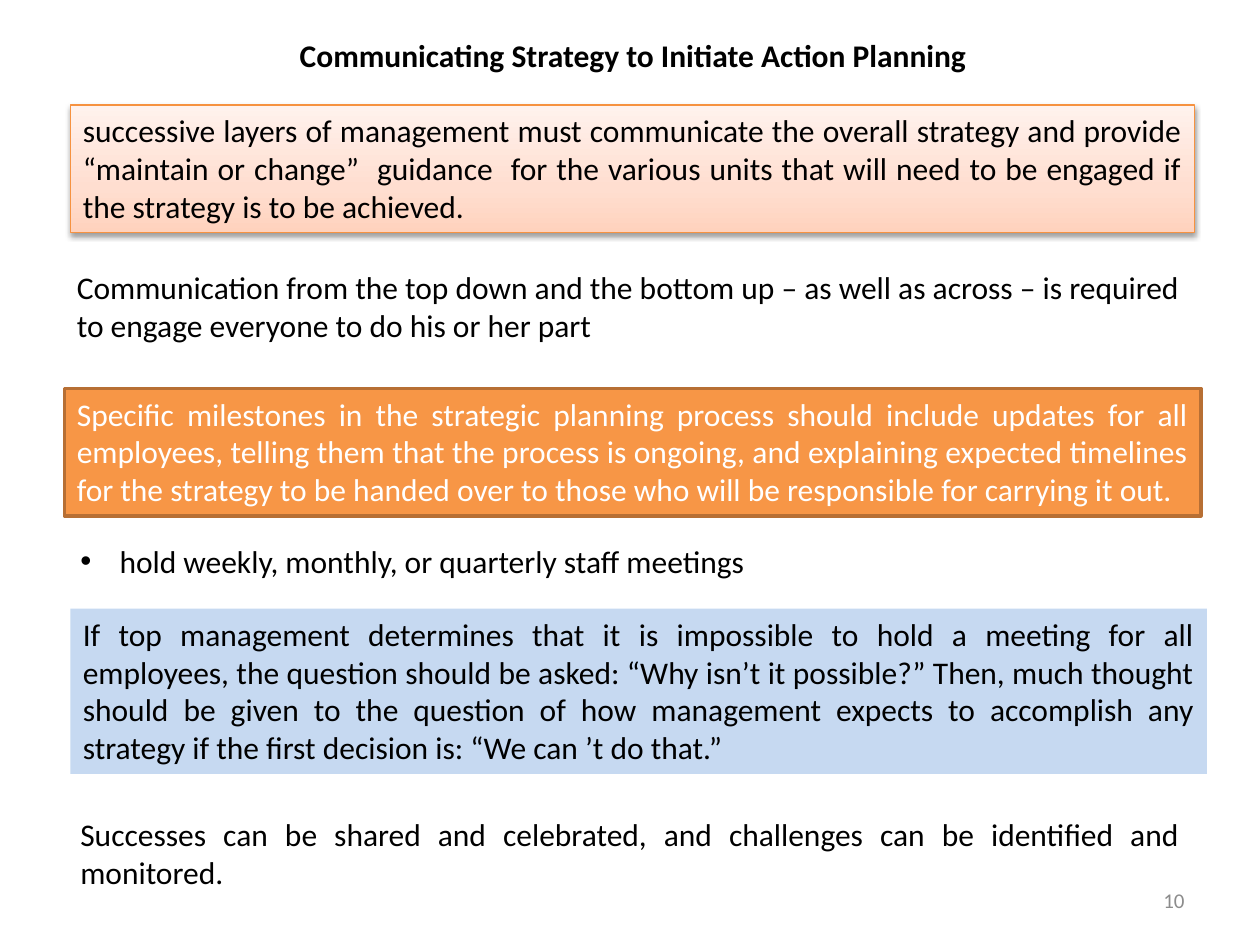
from copy import deepcopy

from lxml import etree
from pptx import Presentation
from pptx.dml.color import RGBColor
from pptx.enum.shapes import MSO_SHAPE
from pptx.enum.text import MSO_ANCHOR, MSO_AUTO_SIZE, PP_ALIGN
from pptx.oxml.ns import qn
from pptx.util import Cm, Pt

RECT = MSO_SHAPE.RECTANGLE
TOP, MIDDLE = MSO_ANCHOR.TOP, MSO_ANCHOR.MIDDLE
GROW, FIXED = MSO_AUTO_SIZE.SHAPE_TO_FIT_TEXT, MSO_AUTO_SIZE.NONE
LEFT, CENTER, RIGHT, JUST = (
    PP_ALIGN.LEFT, PP_ALIGN.CENTER, PP_ALIGN.RIGHT, PP_ALIGN.JUSTIFY)

COLORS = {
    "black": "000000", "white": "FFFFFF", "gray": "8C8C8C",
    "orange": "F79646", "brown": "B76F34", "edge": "F69240",
    "blue": "C6D9F1", "deep": "FFD2BD", "mid": "FFDED0", "pale": "FFF2ED",
}
PEACH = ((0, "deep"), (0.35, "mid"), (1, "pale"))
INDENT = Cm(0.79)


def rgb(name):
    return RGBColor.from_string(COLORS[name])


def write(shape, text, align=LEFT, color="black", size=18, bold=False,
          anchor=TOP, fit=GROW):
    frame = shape.text_frame
    for key, value in {"word_wrap": True, "auto_size": fit,
                       "vertical_anchor": anchor}.items():
        setattr(frame, key, value)
    par = frame.paragraphs[0]
    par.alignment = align
    run = par.add_run()
    run.text = text
    for key, value in {"name": "Calibri", "size": Pt(size),
                       "bold": bold}.items():
        setattr(run.font, key, value)
    run.font.color.rgb = rgb(color)
    return par


def add_text(slide, box, text, **style):
    shape = slide.shapes.add_textbox(*map(Cm, box))
    return write(shape, text, **style)


def add_bullet(slide, box, text):
    props = add_text(slide, box, text)._p.get_or_add_pPr()
    props.set("marL", str(INDENT))
    props.set("indent", str(-INDENT))
    etree.SubElement(props, qn("a:buFont"), typeface="Arial")
    etree.SubElement(props, qn("a:buChar"), char="•")


def add_panel(slide, box, text, fill=None, line=None, width=0, color="black"):
    """Add a justified paragraph in a rectangle, and return the rectangle."""
    shape = slide.shapes.add_shape(RECT, *map(Cm, box))
    shape.shadow.inherit = False
    if fill:
        shape.fill.solid()
        shape.fill.fore_color.rgb = rgb(fill)
    if line:
        shape.line.color.rgb = rgb(line)
        shape.line.width = Pt(width)
    else:
        shape.line.fill.background()
    write(shape, text, align=JUST, color=color)
    return shape


def shade(shape, stops):
    """Fill upwards with a gradient."""
    shape.fill.gradient()
    shape.fill.gradient_angle = 90
    first = shape.fill.gradient_stops[0]._gs
    first.addnext(deepcopy(first))
    for stop, (place, name) in zip(shape.fill.gradient_stops, stops):
        stop.position = place
        stop.color.rgb = rgb(name)


def drop_shadow(shape):
    effects = shape._element.spPr.find(qn("a:effectLst"))
    outer = etree.SubElement(
        effects, qn("a:outerShdw"), blurRad=str(Pt(3.1)), dist=str(Pt(1.6)),
        dir="5400000", rotWithShape="0")
    tint = etree.SubElement(outer, qn("a:srgbClr"), val=COLORS["black"])
    etree.SubElement(tint, qn("a:alpha"), val="38000")


def main():
    deck = Presentation()
    deck.slide_width, deck.slide_height = Cm(25.4), Cm(19.05)
    slide = deck.slides.add_slide(deck.slide_layouts[6])

    add_text(slide, (18.2, 17.65, 5.93, 1.01), "10", align=RIGHT,
             color="gray", size=12, anchor=MIDDLE, fit=FIXED)
    add_text(slide, (4.19, 0.61, 17.15, 1.03),
             "Communicating Strategy to Initiate Action Planning",
             align=CENTER, bold=True)
    layers = add_panel(
        slide, (1.42, 2.12, 22.66, 2.57),
        "successive layers of management must communicate the overall "
        "strategy and provide “maintain or change”  guidance  for the various "
        "units that will need to be engaged if the strategy is to be achieved.",
        line="edge", width=0.75)
    shade(layers, PEACH)
    drop_shadow(layers)
    add_text(
        slide, (1.3, 5.28, 22.91, 1.8),
        "Communication from the top down and the bottom up – as well as "
        "across – is required to engage everyone to do his or her part")
    add_panel(
        slide, (1.3, 7.83, 22.91, 2.57),
        "Speciﬁc milestones in the strategic planning process should include "
        "updates for all employees, telling them that the process is ongoing, "
        "and explaining expected timelines for the strategy to be handed over "
        "to those who will be responsible for carrying it out. ",
        fill="orange", line="brown", width=2, color="white")
    add_text(
        slide, (1.37, 16.31, 22.66, 1.8),
        "Successes can be shared and celebrated, and challenges can be "
        "identiﬁed and monitored. ", align=JUST)
    add_bullet(slide, (1.37, 10.8, 22.83, 1.03),
               "hold weekly, monthly, or quarterly staff meetings")
    add_panel(
        slide, (1.42, 12.27, 22.91, 3.33),
        "If top management determines that it is impossible to hold a meeting "
        "for all employees, the question should be asked: “Why isn’t it "
        "possible?” Then, much thought should be given to the question of how "
        "management expects to accomplish any strategy if the ﬁrst decision "
        "is: “We can ’t do that.”", fill="blue")
    deck.save("out.pptx")


if __name__ == "__main__":
    main()
